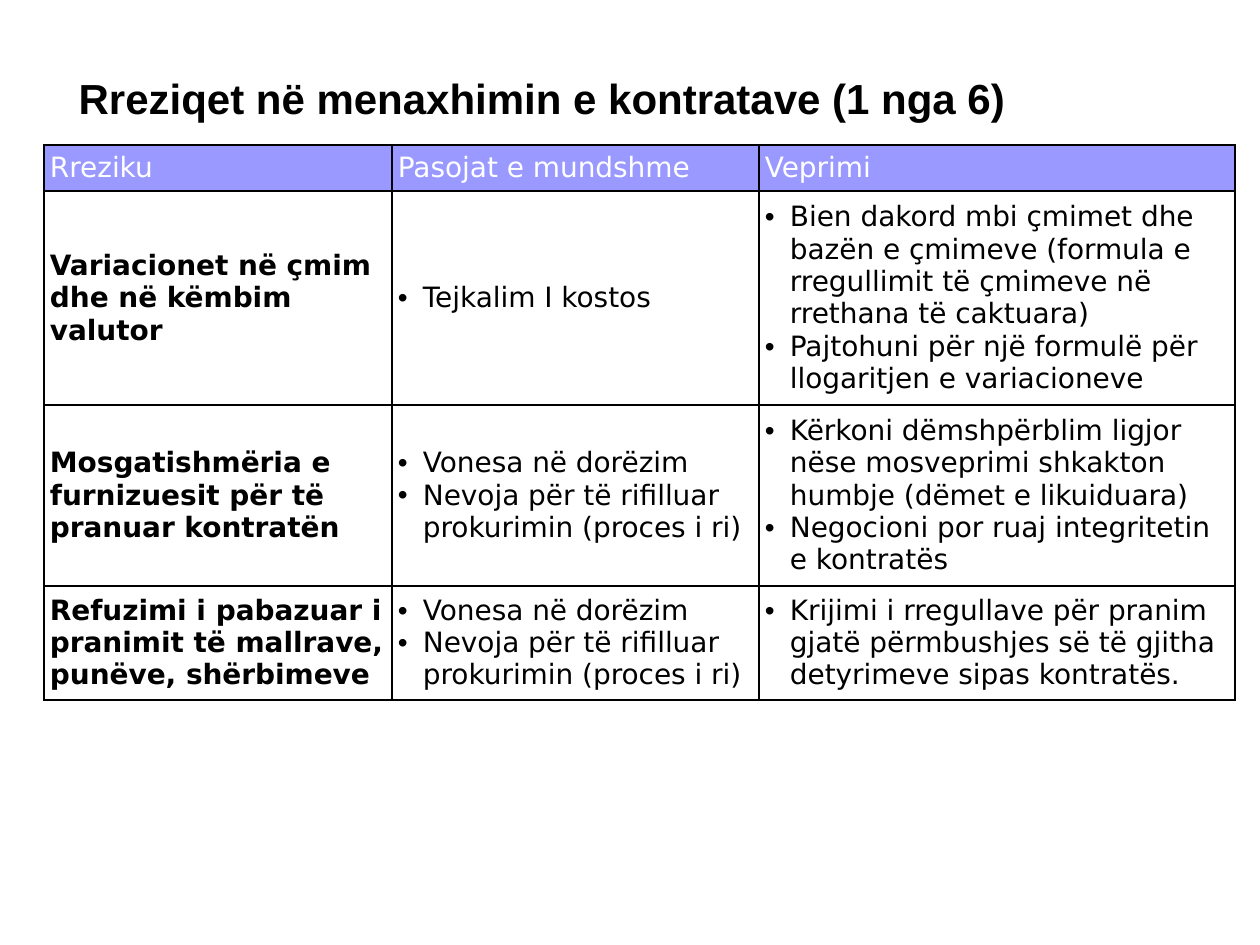
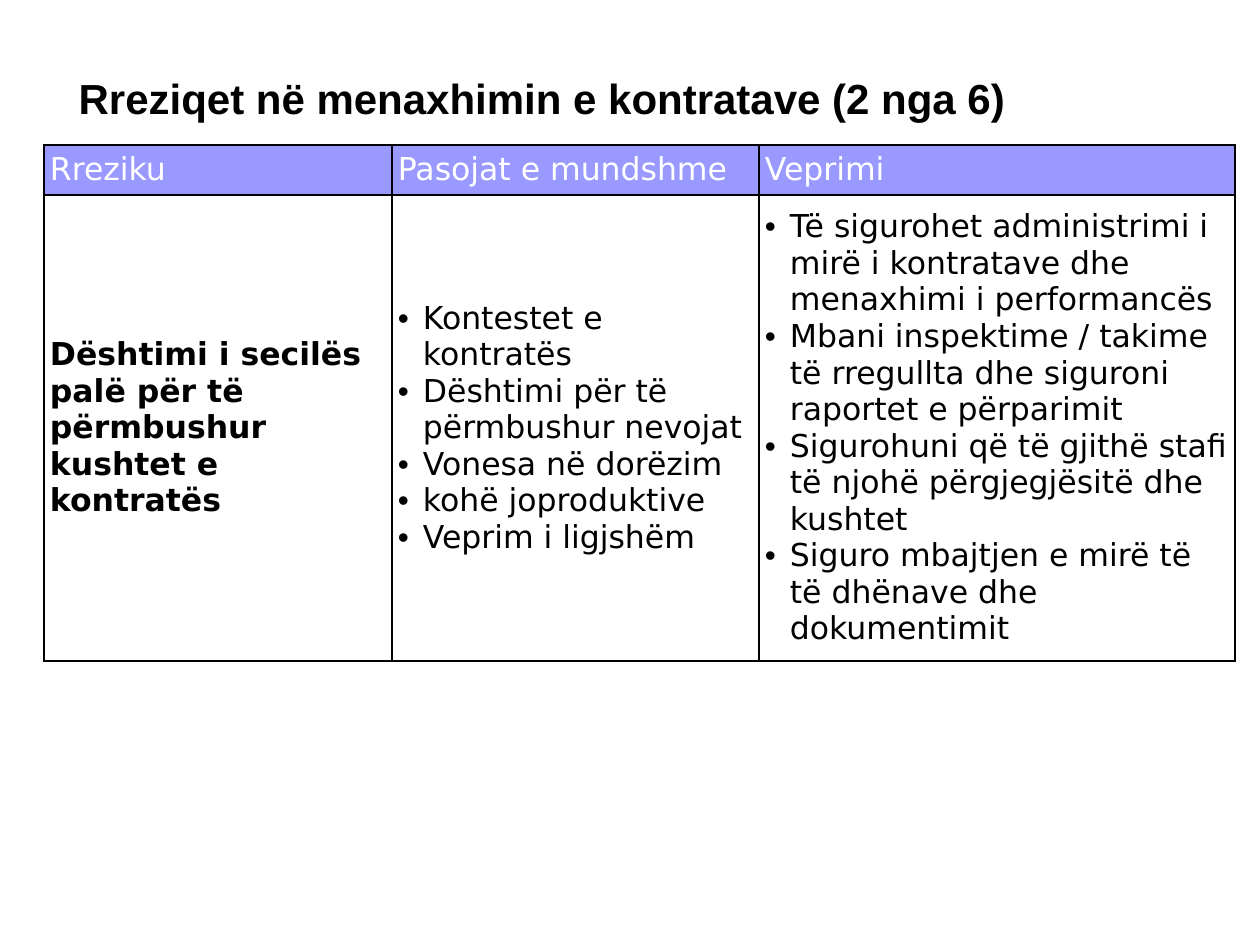
import pptx
import pptx.dml.color
import pptx.enum.text
import pptx.oxml.ns
import pptx.util
from dataclasses import dataclass
from lxml import etree


@dataclass(frozen=True)
class Theme:
    black: str = "000000"
    white: str = "FFFFFF"
    header: str = "9999FF"
    title_font: str = "Arial"
    table_font: str = "DejaVu Sans"
    title_size: int = 24
    border_pt: int = 1


theme = Theme()
PX = 914400 / 126
qn = pptx.oxml.ns.qn
rgb = pptx.dml.color.RGBColor.from_string
MIDDLE = pptx.enum.text.MSO_ANCHOR.MIDDLE


def px(n):
    return pptx.util.Emu(round(n * PX))


def write(p, text, size, font=theme.table_font, color=theme.black, bold=False, bullet=False):
    p.alignment = pptx.enum.text.PP_ALIGN.LEFT
    if bullet:
        pPr = p._p.get_or_add_pPr()
        pPr.set("marL", str(px(25)))
        pPr.set("indent", str(-px(25)))
        etree.SubElement(pPr, qn("a:buFont"), typeface="Arial")
        etree.SubElement(pPr, qn("a:buChar"), char="•")
    r = p.add_run()
    r.text = text
    r.font.size = pptx.util.Pt(size)
    r.font.name = font
    r.font.bold = bold
    r.font.color.rgb = rgb(color)


# Table layout shared by both slides
LEFT, TOP, INSET = 44, 145, 6
COLS = [348, 367, 476]
HEADER = ["Rreziku", "Pasojat e mundshme", "Veprimi"]
LATE_DELIVERY = ["Vonesa në dorëzim", "Nevoja për të rifilluar prokurimin (proces i ri)"]

# Per slide: table text size, row heights, and rows of (risk, consequences, actions)
slides = [
    (16, [46, 214, 181, 114], [
        ("Variacionet në çmim dhe në këmbim valutor",
         ["Tejkalim I kostos"],
         ["Bien dakord mbi çmimet dhe bazën e çmimeve (formula e rregullimit "
          "të çmimeve në rrethana të caktuara)",
          "Pajtohuni për një formulë për llogaritjen e variacioneve"]),
        ("Mosgatishmëria e furnizuesit për të pranuar kontratën",
         LATE_DELIVERY,
         ["Kërkoni dëmshpërblim ligjor nëse mosveprimi shkakton humbje "
          "(dëmet e likuiduara)",
          "Negocioni por ruaj integritetin e kontratës"]),
        ("Refuzimi i pabazuar i pranimit të mallrave, punëve, shërbimeve",
         LATE_DELIVERY,
         ["Krijimi i rregullave për pranim gjatë përmbushjes së të gjitha "
          "detyrimeve sipas kontratës."]),
    ]),
    (18, [50, 466], [
        ("Dështimi i secilës palë për të përmbushur kushtet e kontratës",
         ["Kontestet e kontratës",
          "Dështimi për të përmbushur nevojat",
          "Vonesa në dorëzim",
          "kohë joproduktive",
          "Veprim i ligjshëm"],
         ["Të sigurohet administrimi i mirë i kontratave dhe menaxhimi i performancës",
          "Mbani inspektime / takime të rregullta dhe siguroni raportet e përparimit",
          "Sigurohuni që të gjithë stafi të njohë përgjegjësitë dhe kushtet",
          "Siguro mbajtjen e mirë të të dhënave dhe dokumentimit"]),
    ]),
]

prs = pptx.Presentation()
prs.slide_width, prs.slide_height = px(1260), px(945)

for number, (size, heights, risks) in enumerate(slides, 1):
    slide = prs.slides.add_slide(prs.slide_layouts[5])
    slide.background.fill.solid()
    slide.background.fill.fore_color.rgb = rgb(theme.white)

    # Title
    sp = slide.shapes.title
    sp.left, sp.top, sp.width, sp.height = px(66), px(66), px(1150), px(63)
    tf = sp.text_frame
    tf.auto_size = pptx.enum.text.MSO_AUTO_SIZE.NONE
    tf.vertical_anchor = MIDDLE
    write(tf.paragraphs[0], f"Rreziqet në menaxhimin e kontratave ({number} nga 6)",
          theme.title_size, font=theme.title_font, bold=True)

    # Risk table
    rows = [HEADER] + risks
    table = slide.shapes.add_table(len(rows), len(COLS), px(LEFT), px(TOP),
                                   px(sum(COLS)), px(sum(heights))).table
    table.horz_banding = False
    for col, width in zip(table.columns, COLS):
        col.width = px(width)
    for row, height in zip(table.rows, heights):
        row.height = px(height)

    for i, row in enumerate(rows):
        for j, content in enumerate(row):
            cell = table.cell(i, j)
            cell.vertical_anchor = MIDDLE
            cell.margin_left = cell.margin_right = px(INSET)
            cell.margin_top = cell.margin_bottom = px(INSET)

            # Borders come before the fill in the cell properties
            tcPr = cell._tc.get_or_add_tcPr()
            for side in ("lnL", "lnR", "lnT", "lnB"):
                ln = etree.SubElement(tcPr, qn(f"a:{side}"),
                                      w=str(pptx.util.Pt(theme.border_pt)))
                line_fill = etree.SubElement(ln, qn("a:solidFill"))
                etree.SubElement(line_fill, qn("a:srgbClr"), val=theme.black)
            cell.fill.solid()
            cell.fill.fore_color.rgb = rgb(theme.white if i else theme.header)

            # Cell text: lists are bulleted, risk names are bold
            bullet = isinstance(content, list)
            tf = cell.text_frame
            for k, text in enumerate(content if bullet else [content]):
                p = tf.add_paragraph() if k else tf.paragraphs[0]
                write(p, text, size, color=theme.black if i else theme.white,
                      bold=i > 0 and j == 0, bullet=bullet)

prs.save("out.pptx")
